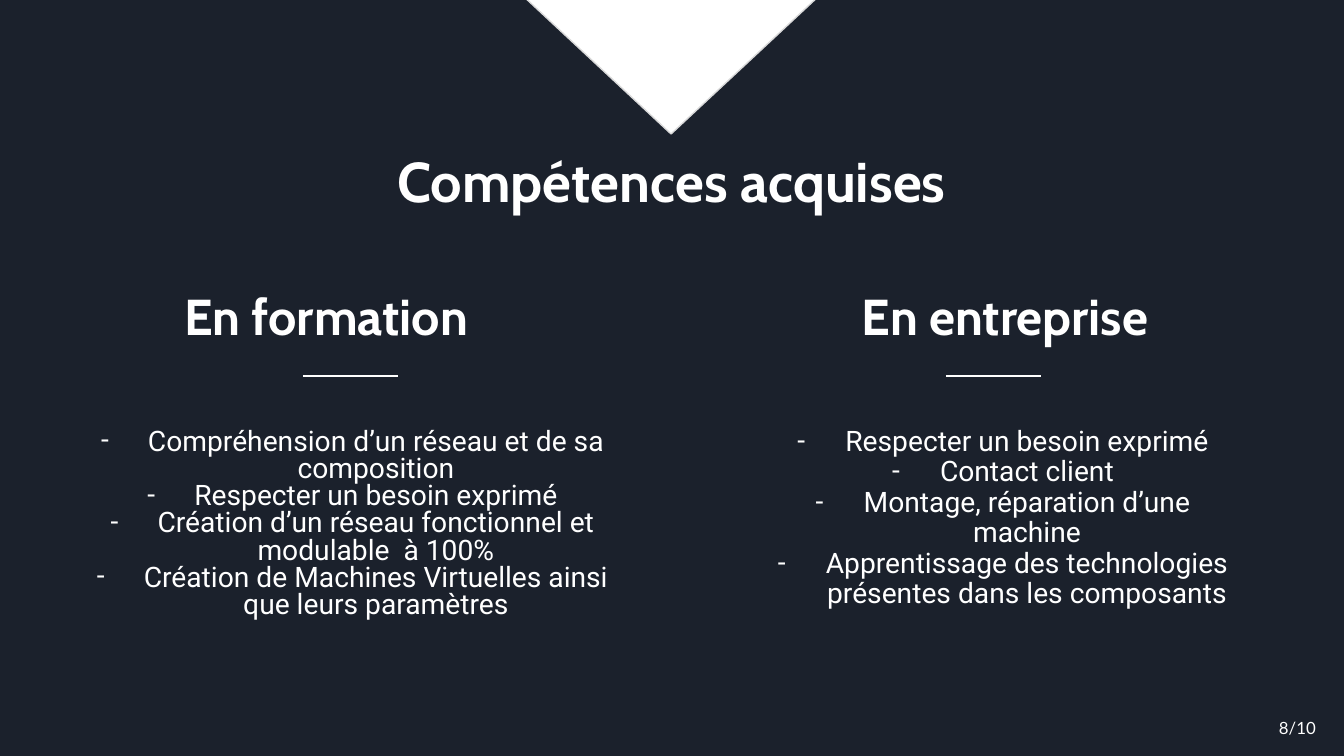
from lxml import etree
from pptx import Presentation
from pptx.dml.color import RGBColor
from pptx.enum.shapes import MSO_CONNECTOR, MSO_SHAPE
from pptx.enum.text import MSO_ANCHOR, PP_ALIGN
from pptx.oxml.ns import qn
from pptx.util import Emu, Pt

STRAIGHT = MSO_CONNECTOR.STRAIGHT
TRIANGLE = MSO_SHAPE.ISOSCELES_TRIANGLE
TOP, MIDDLE = MSO_ANCHOR.TOP, MSO_ANCHOR.MIDDLE
LEFT, CENTER = PP_ALIGN.LEFT, PP_ALIGN.CENTER

EMU_PER_PX = 914400 / 134.4
WIDTH, HEIGHT = 1344, 756
NAVY, WHITE, GRAY = "1B212C", "FFFFFF", "D9D9D9"

TITLE = {"name": "Cabin", "size": Pt(30), "bold": True}
HEADING = {"name": "Cabin", "size": Pt(27), "bold": True}
BODY = {"name": "Roboto", "size": Pt(15.1)}
PAGE_NUMBER = {"name": "Lato", "size": Pt(9)}

COLUMNS = [
    {
        "heading": "En formation",
        "heading_left": 98,
        "rule_left": 303,
        "list_box": (42, 417, 601, 237),
        "hanging": 47,
        "spacing": 0.8,
        "skills": [
            "Compréhension d’un réseau et de sa composition",
            "Respecter un besoin exprimé",
            "Création d’un réseau fonctionnel et modulable  à 100%",
            "Création de Machines Virtuelles ainsi que leurs paramètres",
        ],
    },
    {
        "heading": "En entreprise",
        "heading_left": 777,
        "rule_left": 946,
        "list_box": (728, 414, 531, 145),
        "hanging": 48,
        "spacing": 0.9,
        "skills": [
            "Respecter un besoin exprimé",
            "Contact client",
            "Montage, réparation d’une machine",
            "Apprentissage des technologies présentes dans les composants",
        ],
    },
]


def px(length):
    return Emu(round(length * EMU_PER_PX))


def color(hex_value):
    return RGBColor.from_string(hex_value)


class SlideBuilder:
    """Holds the style and the current slide."""

    def __init__(self, slide, ink, inset=13):
        self.slide = slide
        self.ink = ink
        self.inset = inset

    def background(self, hex_value):
        fill = self.slide.background.fill
        fill.solid()
        fill.fore_color.rgb = color(hex_value)

    def text(self, box, lines, font, align=CENTER, anchor=TOP, spacing=None, hanging=0):
        """Adds a text box; a hanging indent turns its lines into a dash list."""
        frame = self.slide.shapes.add_textbox(*map(px, box)).text_frame
        frame.word_wrap = True
        frame.vertical_anchor = anchor
        for side in ("left", "top", "right", "bottom"):
            setattr(frame, f"margin_{side}", px(self.inset))
        for index, line in enumerate(lines):
            para = frame.add_paragraph() if index else frame.paragraphs[0]
            if hanging:
                self.dash(para, hanging)
            para.alignment = align
            para.line_spacing = spacing
            span = para.add_run()
            span.text = line
            for name, value in font.items():
                setattr(span.font, name, value)
            span.font.color.rgb = color(self.ink)

    def dash(self, para, hanging, margin=67):
        properties = para._p.get_or_add_pPr()
        properties.set("marL", str(px(margin)))
        properties.set("indent", str(-px(hanging)))
        bullet_color = etree.SubElement(properties, qn("a:buClr"))
        etree.SubElement(bullet_color, qn("a:srgbClr"), val=self.ink)
        etree.SubElement(properties, qn("a:buFont"), typeface=BODY["name"])
        etree.SubElement(properties, qn("a:buChar"), char="-")

    def rule(self, left, top, width):
        line = self.slide.shapes.add_connector(
            STRAIGHT, px(left), px(top), px(left + width), px(top)
        )
        line.line.color.rgb = color(self.ink)
        line.line.width = Pt(1.5)
        etree.SubElement(line._element.spPr, qn("a:effectLst"))

    def pointer(self, box, outline):
        """Adds a triangle that points down."""
        shape = self.slide.shapes.add_shape(TRIANGLE, *map(px, box))
        shape.rotation = 180
        shape.shadow.inherit = False
        shape.fill.solid()
        shape.fill.fore_color.rgb = color(self.ink)
        shape.line.color.rgb = color(outline)
        shape.line.width = Pt(0.75)


def main():
    deck = Presentation()
    deck.slide_width, deck.slide_height = px(WIDTH), px(HEIGHT)
    page = SlideBuilder(deck.slides.add_slide(deck.slide_layouts[6]), WHITE)
    page.background(NAVY)
    for column in COLUMNS:
        page.text(
            column["list_box"],
            column["skills"],
            BODY,
            spacing=column["spacing"],
            hanging=column["hanging"],
        )
        heading_box = (column["heading_left"], 292, 456, 46)
        page.text(heading_box, [column["heading"]], HEADING, anchor=MIDDLE)
        page.rule(column["rule_left"], 376, 95)
    page.text((292, 134, 759, 95), ["Compétences acquises"], TITLE)
    page.pointer((507, -19, 328, 153), GRAY)
    page.text((1266, 708, 78, 47), ["8/10"], PAGE_NUMBER, align=LEFT)
    deck.save("out.pptx")


if __name__ == "__main__":
    main()
